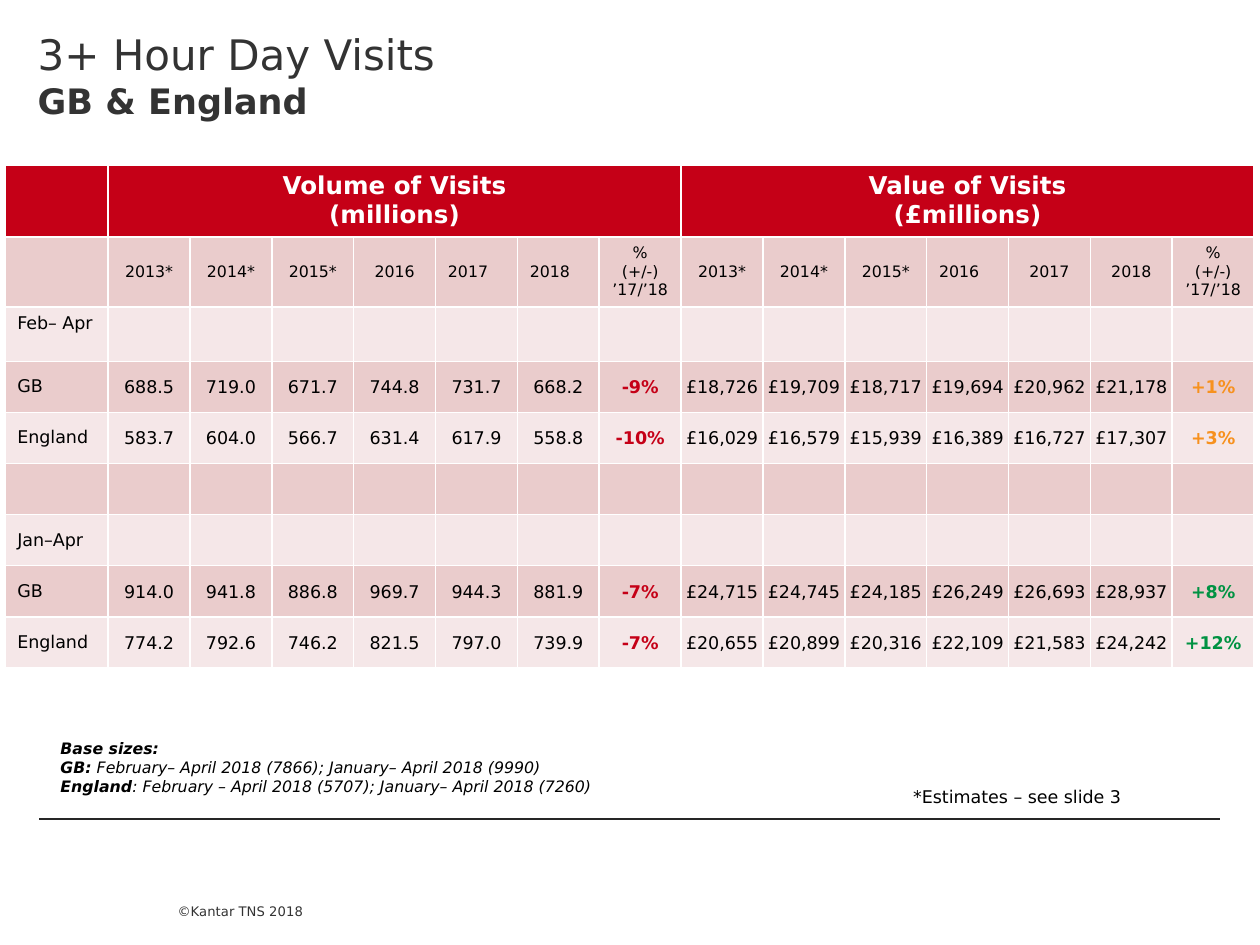
from typing import NamedTuple

from lxml.etree import SubElement
from pptx import Presentation
from pptx.dml.color import RGBColor
from pptx.enum.shapes import MSO_CONNECTOR as Link
from pptx.enum.text import MSO_ANCHOR as Anchor, MSO_AUTO_SIZE as Fit, PP_ALIGN as Align
from pptx.oxml.ns import qn
from pptx.util import Cm, Pt

FONT = "DejaVu Sans"
BLACK, WHITE, GREY = "000000", "FFFFFF", "333333"
RED, AMBER, GREEN = "C50017", "F7911E", "009242"
DARK, PALE = "EACCCC", "F5E7E8"
PAD, TIGHT = (0.25, 0.13, 0.25, 0.13), (0.03, 0.03, 0.03, 0)


class Run(NamedTuple):
    text: str
    bold: bool = False
    size: float | None = None


class Row(NamedTuple):
    label: str
    visits: str = ""
    spend: str = ""
    tint: str = BLACK


ROWS = [
    Row("Feb– Apr"),
    Row("GB", "688.5 719.0 671.7 744.8 731.7 668.2 -9%",
        "£18,726 £19,709 £18,717 £19,694 £20,962 £21,178 +1%", AMBER),
    Row("England", "583.7 604.0 566.7 631.4 617.9 558.8 -10%",
        "£16,029 £16,579 £15,939 £16,389 £16,727 £17,307 +3%", AMBER),
    Row(""),
    Row("Jan–Apr"),
    Row("GB", "914.0 941.8 886.8 969.7 944.3 881.9 -7%",
        "£24,715 £24,745 £24,185 £26,249 £26,693 £28,937 +8%", GREEN),
    Row("England", "774.2 792.6 746.2 821.5 797.0 739.9 -7%",
        "£20,655 £20,899 £20,316 £22,109 £21,583 £24,242 +12%", GREEN),
]
YEARS = ["2013*", "2014*", "2015*", "2016", "2017", "2018", "%\n(+/-) ’17/’18"]
HEADS = ["Volume of Visits\n(millions)", "Value of Visits\n(£millions)"]
LEFT_YEARS = {5, 6, 11}
HEIGHTS = [1.4, 1.4, 1.1] + [1.03] * 6


def color(code: str) -> RGBColor:
    return RGBColor.from_string(code)


def write(frame, text, size=10, tint=BLACK, bold=False, italic=False, align=Align.LEFT):
    """Fill a frame from a string or from paragraphs of runs; a run of "\\n" breaks the line."""
    if isinstance(text, str):
        text = [[Run(line, bold)] for line in text.split("\n")]
    for i, runs in enumerate(text):
        para = frame.add_paragraph() if i else frame.paragraphs[0]
        para.alignment = align
        for part in runs:
            if part.text == "\n":
                para.add_line_break()
                continue
            run = para.add_run()
            run.text = part.text
            font = run.font
            font.name, font.size = FONT, Pt(part.size or size)
            font.bold, font.italic = part.bold, italic
            font.color.rgb = color(tint)


def inset(item, pad):
    item.margin_left, item.margin_top, item.margin_right, item.margin_bottom = map(Cm, pad)


def add_box(slide, place, text, pad=PAD, anchor=Anchor.TOP, wrap=True, **style):
    frame = slide.shapes.add_textbox(*map(Cm, place)).text_frame
    frame.word_wrap = wrap
    frame.vertical_anchor = anchor
    inset(frame, pad)
    write(frame, text, **style)


def fill_cell(cell, text, pad=PAD, anchor=Anchor.MIDDLE, **style):
    inset(cell, pad)
    cell.vertical_anchor = anchor
    if text:
        write(cell.text_frame, text, **style)


def add_title(slide):
    title = slide.shapes.title
    title.left, title.top, title.width, title.height = map(Cm, (0, 0, 14.1, 3.56))
    frame = title.text_frame
    frame.auto_size, frame.word_wrap = Fit.NONE, True
    frame.vertical_anchor = Anchor.TOP
    inset(frame, (0.76, 0.58, 0.76, 0))
    write(frame, [[Run("3+ Hour Day Visits", size=24), Run("\n"),
                   Run("GB & England", True, 20)]], tint=GREY)


def add_grid(slide):
    place = map(Cm, (0.1, 3.33, 25.2, sum(HEIGHTS)))
    table = slide.shapes.add_table(len(HEIGHTS), 15, *place).table
    for i, col in enumerate(table.columns):
        col.width = Cm(1.65 if i else 2.08)
    for i, (row, height) in enumerate(zip(table.rows, HEIGHTS)):
        row.height = Cm(height)
        for cell in row.cells:
            cell.fill.solid()
            cell.fill.fore_color.rgb = color((DARK if i % 2 else PALE) if i else RED)

    for start, head in zip((1, 8), HEADS):
        cell = table.cell(0, start)
        cell.merge(table.cell(0, start + 6))
        fill_cell(cell, head, anchor=Anchor.TOP, size=14, tint=WHITE, bold=True,
                  align=Align.CENTER)
    for i, year in enumerate(YEARS * 2, 1):
        fill_cell(table.cell(1, i), year, size=9,
                  align=Align.LEFT if i in LEFT_YEARS else Align.CENTER)
    for i, row in enumerate(ROWS, 2):
        fill_cell(table.cell(i, 0), row.label, anchor=Anchor.TOP if i == 2 else Anchor.MIDDLE)
        for start, figures, tint in ((1, row.visits, RED), (8, row.spend, row.tint)):
            for j, figure in enumerate(figures.split()):
                last = j == 6
                fill_cell(table.cell(i, start + j), figure, pad=TIGHT, bold=last,
                          tint=tint if last else BLACK, align=Align.CENTER)


def add_rule(slide):
    rule = slide.shapes.add_connector(Link.STRAIGHT, Cm(0.79), Cm(16.51), Cm(24.59), Cm(16.51))
    rule.line.color.rgb = color("262626")
    rule.line.width = Pt(0.75)
    SubElement(rule.element.spPr, qn("a:effectLst"))


def main():
    deck = Presentation()
    deck.slide_width, deck.slide_height = Cm(25.4), Cm(19.05)
    slide = deck.slides.add_slide(deck.slide_layouts[5])
    add_box(slide, (3.58, 17.58, 3.45, 1.47), "©Kantar TNS 2018", pad=(0, 0, 0, 0.74),
            anchor=Anchor.BOTTOM, size=7.5, tint=GREY)
    add_rule(slide)
    add_title(slide)
    add_grid(slide)
    bases = [
        [Run("Base sizes:", True), Run("\n"), Run("GB:", True),
         Run(" February– April 2018 (7866); January– April 2018 (9990)")],
        [Run("England", True),
         Run(": February – April 2018 (5707); January– April 2018 (7260)")],
    ]
    add_box(slide, (0.97, 14.76, 21.44, 1.42), bases, size=9, italic=True)
    add_box(slide, (18.16, 15.72, 4.88, 0.69), "*Estimates – see slide 3", wrap=False)
    deck.save("out.pptx")


if __name__ == "__main__":
    main()
